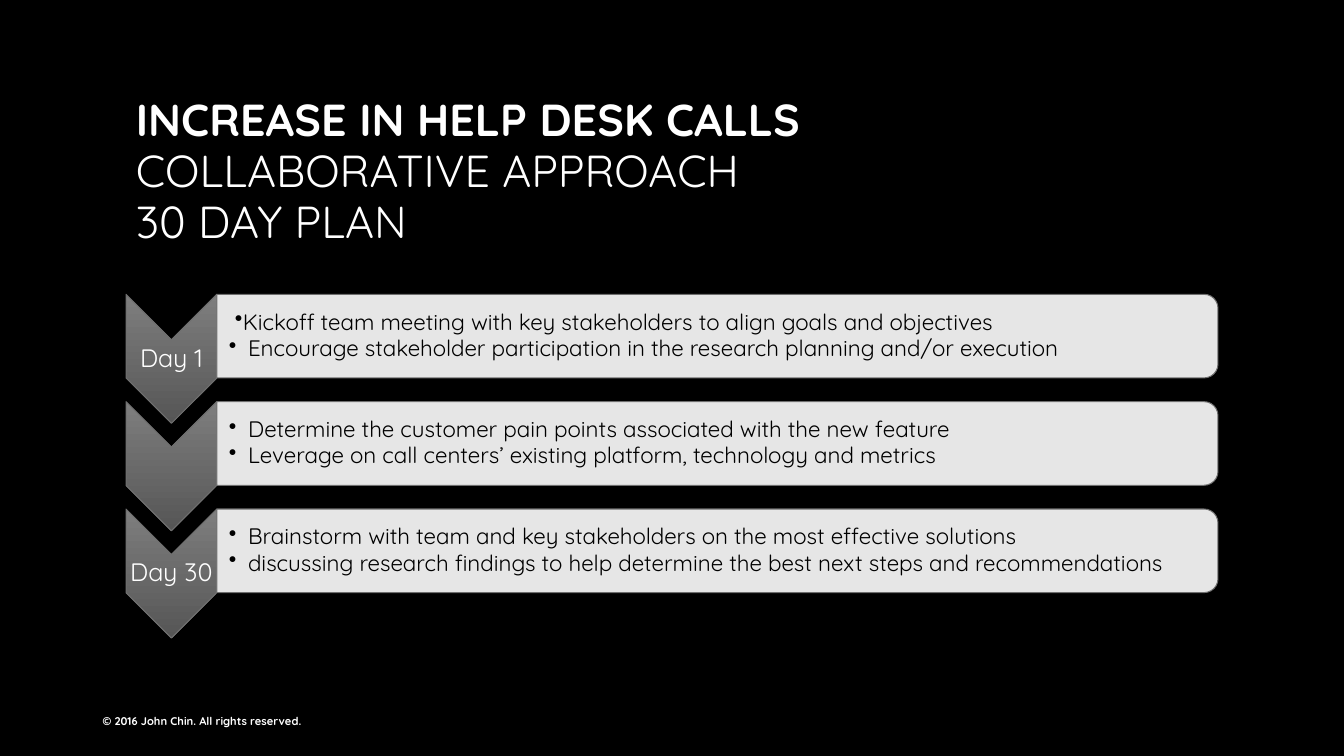
import pptx
import pptx.util
from lxml import etree
from pptx.dml.color import RGBColor
from pptx.enum.shapes import MSO_SHAPE
from pptx.enum.text import MSO_ANCHOR, PP_ALIGN
from pptx.oxml.ns import qn
from pptx.util import Inches, Pt

HEADING = ["INCREASE IN HELP DESK CALLS", "COLLABORATIVE APPROACH", "30 DAY PLAN"]
COPYRIGHT = "© 2016 John Chin. All rights reserved."
# Each stage: day label, then (left margin, first-line indent, wording) per step
STAGES = [
    ("Day 1", [
        (0.06, 0, "Kickoff team meeting with key stakeholders to align goals and objectives"),
        (0.19, -0.19, "Encourage stakeholder participation in the research planning and/or execution"),
    ]),
    ("", [
        (0.19, -0.19, "Determine the customer pain points associated with the new feature"),
        (0.19, -0.19, "Leverage on call centers’ existing platform, technology and metrics"),
    ]),
    ("Day 30", [
        (0.19, -0.19, "Brainstorm with team and key stakeholders on the most effective solutions"),
        (0.19, -0.19, "discussing research findings to help determine the best next steps and recommendations"),
    ]),
]

FONT = "Quicksand"
BLACK = RGBColor(0x00, 0x00, 0x00)
WHITE = RGBColor(0xFF, 0xFF, 0xFF)
OUTLINE = RGBColor(0x6F, 0x6F, 0x6F)
CHEVRON_TOP = RGBColor(0x7E, 0x7E, 0x7E)
CHEVRON_BOTTOM = RGBColor(0x56, 0x56, 0x56)

PLAN_LEFT, PLAN_TOP, STAGE_PITCH = 1.25, 2.92, 2.13 / 2
CHEVRON_WIDTH, CHEVRON_HEIGHT = 0.9, 1.28
BAR_WIDTH, BAR_HEIGHT = 9.93, 0.83
STEPS_WIDTH, STEPS_HEIGHT = 9.89, 0.75
LABEL_HEIGHT = 0.39


def style_runs(paragraph, size, color, bold=False):
    for run in paragraph.runs:
        run.font.name, run.font.size, run.font.bold = FONT, Pt(size), bold
        run.font.color.rgb = color


def add_text_area(slide, left, top, width, height, insets=None):
    frame = slide.shapes.add_textbox(
        Inches(left), Inches(top), Inches(width), Inches(height)).text_frame
    frame.word_wrap = True
    frame.vertical_anchor = MSO_ANCHOR.MIDDLE
    if insets:
        (frame.margin_left, frame.margin_top,
         frame.margin_right, frame.margin_bottom) = map(Inches, insets)
    return frame


def add_turned_shape(slide, preset, left, top, width, height):
    """Add a preset turned by 90 degrees that covers the given area once turned."""
    shape = slide.shapes.add_shape(
        preset, Inches(left + (width - height) / 2), Inches(top + (height - width) / 2),
        Inches(height), Inches(width))
    shape.rotation = 90
    shape.shadow.inherit = False
    shape.line.color.rgb = OUTLINE
    shape.line.width = Pt(0.75)
    return shape


def add_chevron(slide, top):
    chevron = add_turned_shape(slide, MSO_SHAPE.CHEVRON, PLAN_LEFT, top,
                               CHEVRON_WIDTH, CHEVRON_HEIGHT)
    chevron.fill.gradient()
    chevron.fill.gradient_angle = 270
    for stop, color, position in zip(chevron.fill.gradient_stops,
                                     (CHEVRON_TOP, CHEVRON_BOTTOM), (0, 1)):
        stop.color.rgb = color
        stop.position = position
    chevron.element.spPr.find(qn("a:gradFill")).set("rotWithShape", "0")


def add_bar(slide, top):
    bar = add_turned_shape(slide, MSO_SHAPE.ROUND_2_SAME_RECTANGLE,
                           PLAN_LEFT + CHEVRON_WIDTH, top, BAR_WIDTH, BAR_HEIGHT)
    bar.fill.solid()
    bar.fill.fore_color.rgb = WHITE
    fill_color = bar.element.spPr.find(qn("a:solidFill")).find(qn("a:srgbClr"))
    etree.SubElement(fill_color, qn("a:alpha")).set("val", "90000")


def add_label(slide, label, top):
    frame = add_text_area(slide, PLAN_LEFT, top + (CHEVRON_HEIGHT - LABEL_HEIGHT) / 2,
                          CHEVRON_WIDTH, LABEL_HEIGHT, (0.01,) * 4)
    day = frame.paragraphs[0]
    day.text = label
    day.alignment = PP_ALIGN.CENTER
    day.line_spacing = 0.9
    style_runs(day, 18, WHITE)


def add_steps(slide, steps, top):
    frame = add_text_area(slide, PLAN_LEFT + CHEVRON_WIDTH,
                          top + (BAR_HEIGHT - STEPS_HEIGHT) / 2,
                          STEPS_WIDTH, STEPS_HEIGHT, (0.12, 0.01, 0.01, 0.01))
    frame.text = "\n".join(wording for _, _, wording in steps)
    for step, (margin, indent, _) in zip(frame.paragraphs, steps):
        step.level = 1
        step.line_spacing = 0.9
        step.space_after = Pt(1.5)
        style_runs(step, 16, BLACK)
        properties = step._p.get_or_add_pPr()
        properties.set("marL", str(Inches(margin)))
        properties.set("indent", str(Inches(indent)))
        etree.SubElement(properties, qn("a:buChar")).set("char", "•")


def main():
    deck = pptx.Presentation()
    deck.slide_width, deck.slide_height = Inches(13.33), Inches(7.5)
    slide = deck.slides.add_slide(deck.slide_layouts[6])
    slide.background.fill.solid()
    slide.background.fill.fore_color.rgb = BLACK

    copyright_line = add_text_area(slide, 0.92, 6.95, 3, 0.4).paragraphs[0]
    copyright_line.text = COPYRIGHT
    style_runs(copyright_line, 8, WHITE, bold=True)

    heading = add_text_area(slide, 1.25, 0.67, 10.83, 2.08).paragraphs[0]
    heading.text = "\v".join(HEADING)
    heading.line_spacing = 0.95
    style_runs(heading, 32, WHITE)
    heading.runs[0].font.bold = True

    for number, (label, steps) in enumerate(STAGES):
        top = PLAN_TOP + number * STAGE_PITCH
        add_chevron(slide, top)
        if label:
            add_label(slide, label, top)
        add_bar(slide, top)
        add_steps(slide, steps, top)

    deck.save("out.pptx")


if __name__ == "__main__":
    main()
